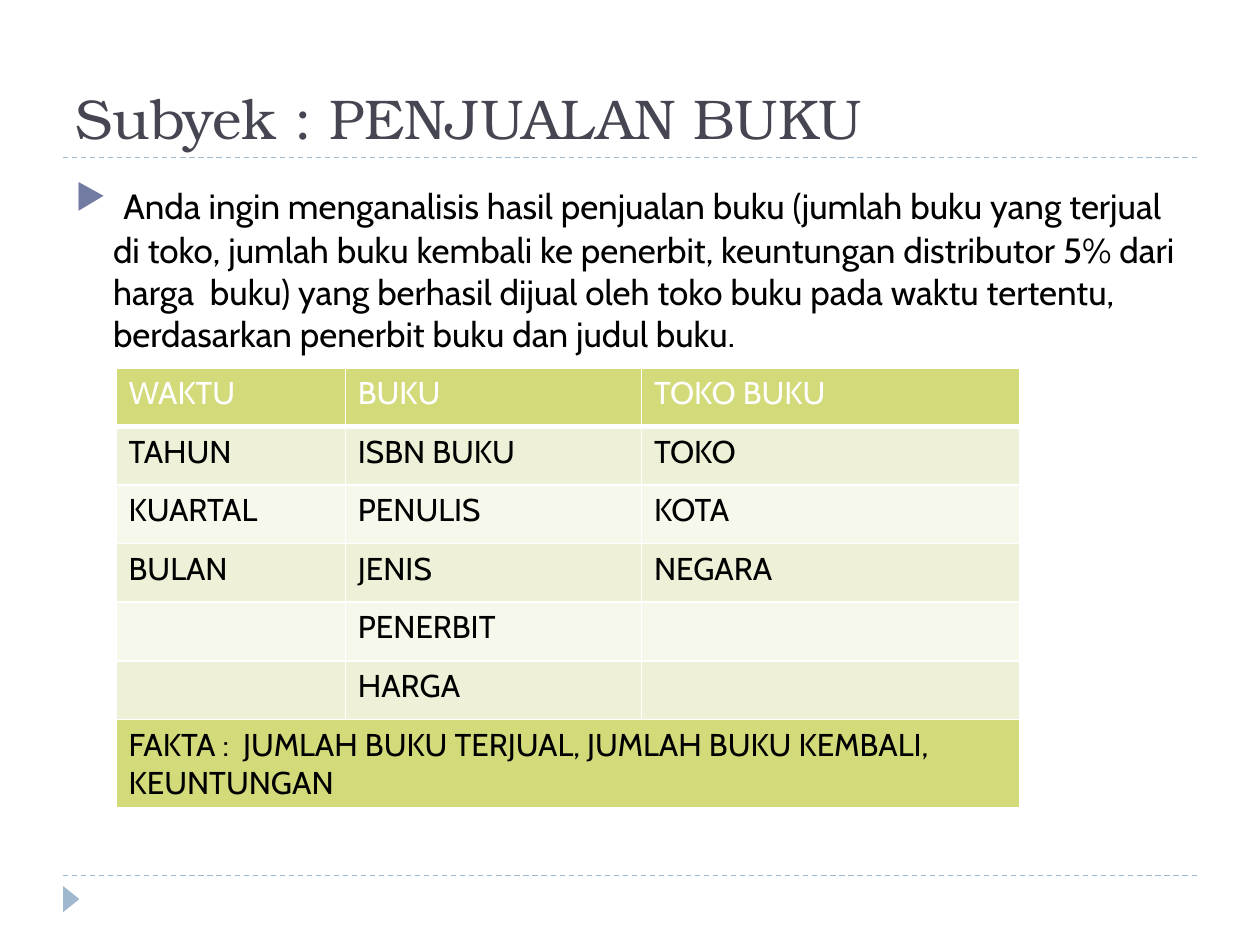
from dataclasses import dataclass

import lxml.etree
import pptx
import pptx.dml.color
import pptx.enum.dml
import pptx.enum.shapes
import pptx.enum.text
import pptx.oxml.ns
import pptx.util
from pptx.util import Cm

COLORS = {
    "title": "464653",
    "text": "000000",
    "white": "FFFFFF",
    "accent": "9FB8CD",
    "bullet": "727CA3",
    "band_strong": "D2DA7A",
    "band_odd": "EEF1D7",
    "band_even": "F7F8EC",
}
TITLE_FONT = "TeX Gyre Bonum"
BODY_FONT = "Cabin"

COLUMN_WIDTHS = (4.62, 5.97, 7.62)
ROW_HEIGHT = 1.18
FACT_ROW_HEIGHT = 1.78
ROWS = (
    ("WAKTU", "BUKU", "TOKO BUKU"),
    ("TAHUN", "ISBN BUKU", "TOKO"),
    ("KUARTAL", "PENULIS", "KOTA"),
    ("BULAN", "JENIS", "NEGARA"),
    ("", "PENERBIT", ""),
    ("", "HARGA", ""),
    ("FAKTA :  JUMLAH BUKU TERJUAL, JUMLAH BUKU KEMBALI, KEUNTUNGAN", "", ""),
)
BODY_TEXT = (
    "Anda ingin menganalisis hasil penjualan buku (jumlah buku yang terjual "
    "di toko, jumlah buku kembali ke penerbit, keuntungan distributor 5% dari "
    "harga  buku) yang berhasil dijual oleh toko buku pada waktu tertentu, "
    "berdasarkan penerbit buku dan judul buku."
)


@dataclass
class TextStyle:
    font: str
    size: float
    color: str


def rgb(name: str) -> pptx.dml.color.RGBColor:
    return pptx.dml.color.RGBColor.from_string(COLORS[name])


def add_element(parent, tag: str, **attributes: str):
    element = lxml.etree.SubElement(parent, pptx.oxml.ns.qn(tag))
    for name, value in attributes.items():
        element.set(name, value)
    return element


def format_run(run, style: TextStyle) -> None:
    run.font.name = style.font
    run.font.size = pptx.util.Pt(style.size)
    run.font.color.rgb = rgb(style.color)
    run.font.bold = False


def add_text_frame(slide, top: float, height: float):
    box = slide.shapes.add_textbox(Cm(1.27), Cm(top), Cm(22.86), Cm(height))
    box.text_frame.word_wrap = True
    return box.text_frame


def add_rule(slide, top: float) -> None:
    rule = slide.shapes.add_connector(
        pptx.enum.shapes.MSO_CONNECTOR.STRAIGHT, Cm(1.27), Cm(top), Cm(24.13), Cm(top)
    )
    rule.line.color.rgb = rgb("accent")
    rule.line.width = pptx.util.Pt(0.75)
    rule.line.dash_style = pptx.enum.dml.MSO_LINE.DASH
    add_element(rule._element.spPr, "a:effectLst")


def add_marker(slide) -> None:
    marker = slide.shapes.add_shape(
        pptx.enum.shapes.MSO_SHAPE.ISOSCELES_TRIANGLE,
        Cm(1.17), Cm(17.96), Cm(0.53), Cm(0.33),
    )
    marker.rotation = 90
    marker.shadow.inherit = False
    marker.fill.solid()
    marker.fill.fore_color.rgb = rgb("accent")
    marker.line.fill.background()


def add_title(slide) -> None:
    frame = add_text_frame(slide, 0.43, 2.74)
    frame.vertical_anchor = pptx.enum.text.MSO_ANCHOR.BOTTOM
    frame.text = "Subyek : PENJUALAN BUKU"
    format_run(frame.paragraphs[0].runs[0], TextStyle(TITLE_FONT, 32, "title"))


def add_body(slide) -> None:
    paragraph = add_text_frame(slide, 3.38, 13.72).paragraphs[0]
    paragraph.space_before = pptx.util.Pt(6)
    for text, size in ((" ", 26), (BODY_TEXT, 20)):
        run = paragraph.add_run()
        run.text = text
        format_run(run, TextStyle(BODY_FONT, size, "text"))

    # Hanging triangle bullet
    properties = paragraph._p.get_or_add_pPr()
    properties.set("marL", str(Cm(0.76)))
    properties.set("indent", str(-Cm(0.76)))
    bullet_color = add_element(properties, "a:buClr")
    add_element(bullet_color, "a:srgbClr", val=COLORS["bullet"])
    add_element(properties, "a:buSzPct", val="76000")
    add_element(properties, "a:buChar", char="▶")


def set_borders(cell, bottom_width: float) -> None:
    properties = cell._tc.get_or_add_tcPr()
    widths = {"a:lnL": 1, "a:lnR": 1, "a:lnT": 1, "a:lnB": bottom_width}
    for index, (tag, width) in enumerate(widths.items()):
        border = add_element(properties, tag, w=str(pptx.util.Pt(width)))
        fill = add_element(border, "a:solidFill")
        add_element(fill, "a:srgbClr", val=COLORS["white"])
        properties.insert(index, border)


def row_fill(row_index: int) -> str:
    if row_index in (0, len(ROWS) - 1):
        return "band_strong"
    return "band_odd" if row_index % 2 else "band_even"


def add_dimension_table(slide) -> None:
    height = ROW_HEIGHT * (len(ROWS) - 1) + FACT_ROW_HEIGHT
    table = slide.shapes.add_table(
        len(ROWS), len(COLUMN_WIDTHS),
        Cm(2.34), Cm(7.42), Cm(sum(COLUMN_WIDTHS)), Cm(height),
    ).table
    for column, width in zip(table.columns, COLUMN_WIDTHS):
        column.width = Cm(width)

    for row_index, texts in enumerate(ROWS):
        is_header = row_index == 0
        is_fact = row_index == len(ROWS) - 1
        table.rows[row_index].height = Cm(FACT_ROW_HEIGHT if is_fact else ROW_HEIGHT)
        style = TextStyle(BODY_FONT, 18, "white" if is_header else "text")
        for column_index, text in enumerate(texts):
            cell = table.cell(row_index, column_index)
            cell.fill.solid()
            cell.fill.fore_color.rgb = rgb(row_fill(row_index))
            set_borders(cell, 3 if is_header else 1)
            if text:
                cell.text_frame.text = text
                format_run(cell.text_frame.paragraphs[0].runs[0], style)

    # The fact row spans all columns
    last_row = len(ROWS) - 1
    table.cell(last_row, 0).merge(table.cell(last_row, len(COLUMN_WIDTHS) - 1))


def main() -> None:
    presentation = pptx.Presentation()
    presentation.slide_width = Cm(25.4)
    presentation.slide_height = Cm(19.05)
    slide = presentation.slides.add_slide(presentation.slide_layouts[6])

    # Frame decoration
    for top in (17.65, 3.17):
        add_rule(slide, top)
    add_marker(slide)

    # Content
    add_title(slide)
    add_body(slide)
    add_dimension_table(slide)

    presentation.save("out.pptx")


if __name__ == "__main__":
    main()
